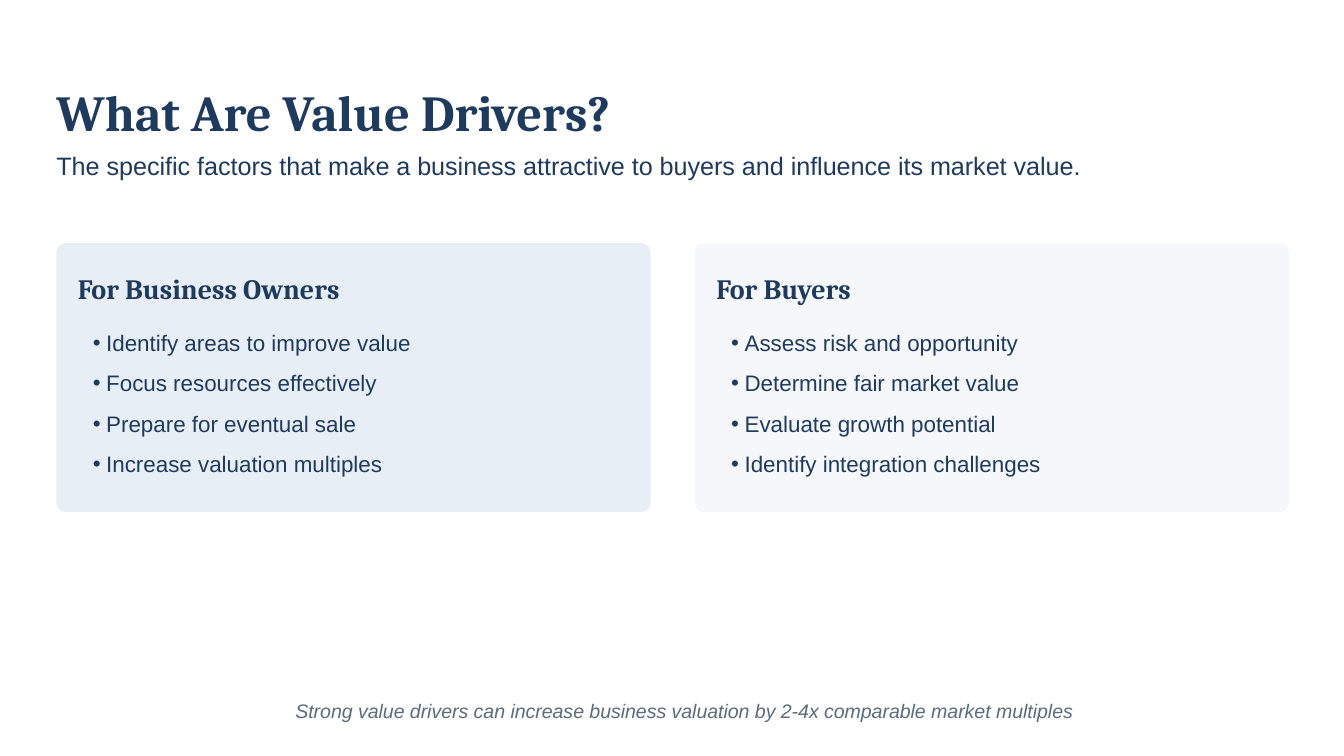
from dataclasses import dataclass

from lxml import etree
from pptx import Presentation
from pptx.dml.color import RGBColor
from pptx.enum import shapes, text
from pptx.oxml import ns
from pptx.util import Inches, Pt


@dataclass(frozen=True)
class Theme:
    heading_font: str = "Cambria"
    body_font: str = "Arial"
    navy: str = "1E3A5F"
    gray: str = "5A6C7D"
    owners_fill: str = "E8EEF5"
    buyers_fill: str = "F5F7FA"
    title_size: float = 27
    subtitle_size: float = 13.5
    heading_size: float = 15
    list_size: float = 12
    note_size: float = 10.5


def write(p, content, *, font, size, color, spacing, bold=False, italic=False,
          align=text.PP_ALIGN.LEFT, after=0):
    p.alignment = align
    p.line_spacing = spacing
    p.space_before = Pt(0)
    p.space_after = Pt(after)
    r = p.add_run()
    r.text = content
    r.font.name = font
    r.font.size = Pt(size)
    r.font.bold = bold
    r.font.italic = italic
    r.font.color.rgb = RGBColor.from_string(color)


class SlideBuilder:
    def __init__(self, prs, theme):
        self.theme = theme
        self.s = prs.slides.add_slide(prs.slide_layouts[3])

    def frame(self, sp, box, inset=0):
        sp.left, sp.top, sp.width, sp.height = (Inches(v) for v in box)
        tf = sp.text_frame
        tf.word_wrap = True
        tf.auto_size = text.MSO_AUTO_SIZE.NONE
        tf.vertical_anchor = text.MSO_ANCHOR.TOP
        tf.margin_left = Inches(inset)
        tf.margin_top = tf.margin_right = tf.margin_bottom = 0
        return tf

    def title(self, content, box):
        t = self.theme
        tf = self.frame(self.s.shapes.title, box)
        write(tf.paragraphs[0], content, font=t.heading_font, size=t.title_size,
              color=t.navy, spacing=Pt(30), bold=True, after=6)

    def label(self, content, box, **fmt):
        sp = self.s.shapes.add_textbox(0, 0, 0, 0)
        write(self.frame(sp, box).paragraphs[0], content, **fmt)

    def panel(self, box, fill):
        sp = self.s.shapes.add_shape(shapes.MSO_SHAPE.ROUNDED_RECTANGLE,
                                     *(Inches(v) for v in box))
        sp.adjustments[0] = 0.033
        sp.shadow.inherit = False
        sp.fill.solid()
        sp.fill.fore_color.rgb = RGBColor.from_string(fill)
        sp.line.fill.background()

    def bullets(self, idx, items, box):
        t = self.theme
        sp = self.s.placeholders[idx]
        self.s.shapes._spTree.append(sp._element)
        tf = self.frame(sp, box, inset=0.1)
        for i, item in enumerate(items):
            p = tf.add_paragraph() if i else tf.paragraphs[0]
            pPr = p._p.get_or_add_pPr()
            pPr.set("marL", str(Inches(0.1)))
            pPr.set("indent", str(Inches(-0.1)))
            etree.SubElement(pPr, ns.qn("a:buChar")).set("char", "•")
            write(p, item, font=t.body_font, size=t.list_size, color=t.navy,
                  spacing=1.5)

    def card(self, idx, left, heading, items, fill):
        t = self.theme
        self.panel((left, 1.81, 4.42, 2), fill)
        self.label(heading, (left + 0.16, 1.98, 4.17, 0.29),
                   font=t.heading_font, size=t.heading_size, color=t.navy,
                   spacing=Pt(21), bold=True, after=6)
        self.bullets(idx, items, (left + 0.17, 2.35, 4.08, 1.29))


def main():
    prs = Presentation()
    prs.slide_width, prs.slide_height = Inches(10), Inches(10 * 9 / 16)
    theme = Theme()
    slide = SlideBuilder(prs, theme)
    margin, pitch = 0.42, 4.75

    slide.title("What Are Value Drivers?", (margin, 0.64, 6.64, 0.42))
    slide.label("The specific factors that make a business attractive to buyers "
                "and influence its market value.", (margin, 1.05, 9.35, 0.29),
                font=theme.body_font, size=theme.subtitle_size,
                color=theme.navy, spacing=Pt(21), after=9)

    cards = [
        ("For Business Owners", theme.owners_fill,
         ["Identify areas to improve value", "Focus resources effectively",
          "Prepare for eventual sale", "Increase valuation multiples"]),
        ("For Buyers", theme.buyers_fill,
         ["Assess risk and opportunity", "Determine fair market value",
          "Evaluate growth potential", "Identify integration challenges"]),
    ]
    for i, (heading, fill, items) in enumerate(cards):
        slide.card(i + 1, margin + i * pitch, heading, items, fill)

    slide.label("Strong value drivers can increase business valuation by 2-4x "
                "comparable market multiples", (margin, 5.18, 9.35, 0.19),
                font=theme.body_font, size=theme.note_size, color=theme.gray,
                spacing=Pt(14), italic=True, align=text.PP_ALIGN.CENTER)
    prs.save("out.pptx")


if __name__ == "__main__":
    main()
